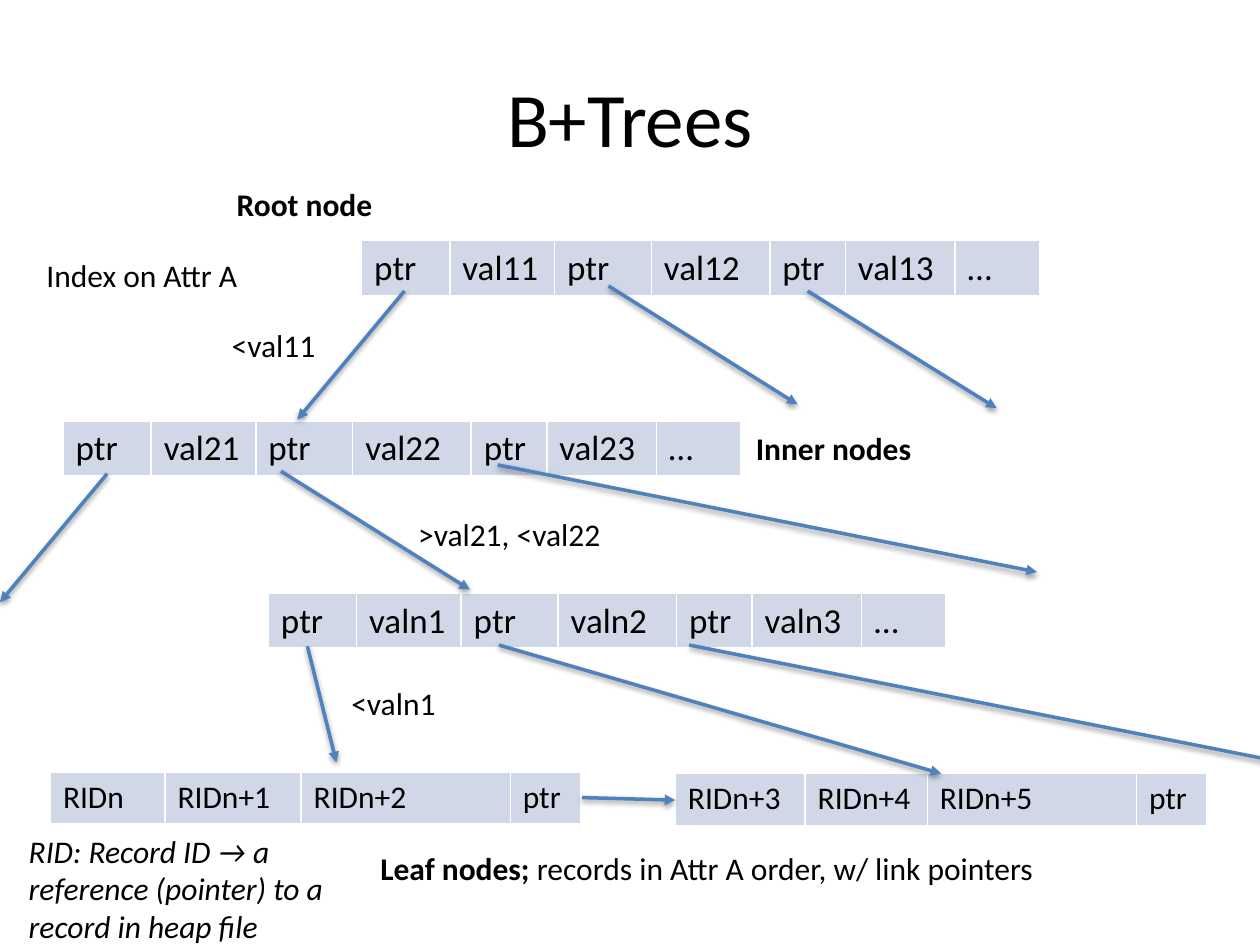
import dataclasses

import lxml.etree
import pptx
import pptx.dml.color
import pptx.enum.shapes
import pptx.enum.text
import pptx.oxml
import pptx.oxml.ns
import pptx.util

Inches = pptx.util.Inches
Pt = pptx.util.Pt
RGB = pptx.dml.color.RGBColor.from_string
qn = pptx.oxml.ns.qn
NS = pptx.oxml.ns.nsdecls("a")


@dataclasses.dataclass(frozen=True)
class Theme:
    font: str = "Calibri"
    text: str = "000000"
    cell: str = "D0D8E8"
    border: str = "FFFFFF"
    arrow: str = "4F81BD"
    title_size: int = 44
    node_size: int = 20
    body_size: int = 18


class TreeSlide:
    def __init__(self, slide, theme):
        self.slide = slide
        self.theme = theme

    def style(self, run, size, bold=False, italic=False):
        font = run.font
        font.name, font.size = self.theme.font, Pt(size)
        font.bold, font.italic = bold, italic
        font.color.rgb = RGB(self.theme.text)

    def text_box(self, left, top, width, height, text, size, wrap=True):
        box = self.slide.shapes.add_textbox(
            Inches(left), Inches(top), Inches(width), Inches(height))
        frame = box.text_frame
        frame.word_wrap = wrap
        frame.text = text
        self.style(frame.paragraphs[0].runs[0], size)
        return frame

    def title(self, text):
        frame = self.text_box(0.5, 0.3, 9, 1.25, text, self.theme.title_size)
        frame.vertical_anchor = pptx.enum.text.MSO_ANCHOR.MIDDLE
        frame.paragraphs[0].alignment = pptx.enum.text.PP_ALIGN.CENTER

    def label(self, left, top, width, text, height=0.4, wrap=True,
              bold=False, italic=False, plain_tail=""):
        size = self.theme.body_size
        paragraph = self.text_box(
            left, top, width, height, text, size, wrap).paragraphs[0]
        self.style(paragraph.runs[0], size, bold, italic)
        if plain_tail:
            tail = paragraph.add_run()
            tail.text = plain_tail
            self.style(tail, size)

    def node(self, left, top, height, widths, entries, size):
        table = self.slide.shapes.add_table(
            1, len(entries), Inches(left), Inches(top),
            Inches(sum(widths)), Inches(height)).table
        table.first_row = table.horz_banding = False
        for column, width, entry in zip(table.columns, widths, entries):
            column.width = Inches(width)
        for cell, entry in zip(table.rows[0].cells, entries):
            cell.text = entry
            self.style(cell.text_frame.paragraphs[0].runs[0], size)
            cell.fill.solid()
            cell.fill.fore_color.rgb = RGB(self.theme.cell)
            self.cell_borders(cell)

    def cell_borders(self, cell):
        properties = cell._tc.get_or_add_tcPr()
        for position, side in enumerate(("lnL", "lnR", "lnT", "lnB")):
            properties.insert(position, pptx.oxml.parse_xml(
                f'<a:{side} {NS} w="{Pt(1)}"><a:solidFill>'
                f'<a:srgbClr val="{self.theme.border}"/></a:solidFill></a:{side}>'))

    def arrow(self, x1, y1, x2, y2):
        line = self.slide.shapes.add_connector(
            pptx.enum.shapes.MSO_CONNECTOR.STRAIGHT,
            Inches(x1), Inches(y1), Inches(x2), Inches(y2))
        line.line.color.rgb = RGB(self.theme.arrow)
        line.line.width = Pt(2)
        lxml.etree.SubElement(
            line.line._get_or_add_ln(), qn("a:tailEnd"), type="triangle")
        # Soft shadow straight below the line
        line._element.spPr.append(pptx.oxml.parse_xml(
            f'<a:effectLst {NS}><a:outerShdw blurRad="{Pt(3.1)}" dist="{Pt(1.6)}"'
            ' dir="5400000" rotWithShape="0"><a:srgbClr val="000000">'
            '<a:alpha val="38000"/></a:srgbClr></a:outerShdw></a:effectLst>'))


def main():
    presentation = pptx.Presentation()
    presentation.slide_width = Inches(10)
    presentation.slide_height = Inches(7.5)
    theme = Theme()
    tree = TreeSlide(
        presentation.slides.add_slide(presentation.slide_layouts[6]), theme)

    tree.title("B+Trees")

    # Root and inner nodes: pointers alternate with the values of one level
    key_widths = [0.7, 0.83, 0.77, 0.94, 0.6, 0.87, 0.67]
    for left, top, level in [(2.87, 1.91, "1"), (0.5, 3.34, "2"), (2.13, 4.71, "n")]:
        entries = [entry for i in (1, 2, 3) for entry in ("ptr", f"val{level}{i}")]
        tree.node(left, top, 0.43, key_widths, entries + ["…"], theme.node_size)

    # Leaf nodes: record IDs and a link pointer
    for left, top, id_widths, records in [
        (0.4, 6.13, [0.91, 1.08], ["RIDn", "RIDn+1", "RIDn+2"]),
        (5.36, 6.14, [1.03, 0.97], ["RIDn+3", "RIDn+4", "RIDn+5"]),
    ]:
        tree.node(left, top, 0.41, id_widths + [1.66, 0.56],
                  records + ["ptr"], theme.body_size)

    # Pointers, level by level, then the link between the leaves
    for ends in [
        (3.21, 2.31, 2.36, 3.33), (4.83, 2.27, 6.33, 3.21), (6.41, 2.31, 7.91, 3.24),
        (0.85, 3.76, 0, 4.78), (2.23, 3.74, 3.73, 4.68), (3.95, 3.69, 8.23, 4.54),
        (2.44, 5.13, 2.67, 6.05), (3.96, 5.12, 7.47, 6.14), (5.47, 5.12, 10.18, 6.05),
        (4.62, 6.33, 5.36, 6.35),
    ]:
        tree.arrow(*ends)

    # Conditions on the pointers
    tree.label(1.74, 2.54, 1.59, "<val11")
    tree.label(3.22, 4.04, 2.4, ">val21, <val22")
    tree.label(2.69, 5.38, 2.4, "<valn1")

    # Names of the levels and remarks
    tree.label(2.92, 6.69, 6.08, "Leaf nodes; ", bold=True,
               plain_tail="records in Attr A order, w/ link pointers")
    tree.label(1.78, 1.42, 1.59, "Root node", bold=True)
    tree.label(5.9, 3.36, 1.59, "Inner nodes", bold=True)
    tree.label(0.27, 1.98, 1.74, "Index on Attr A", wrap=False)
    tree.label(0.13, 6.55, 2.54,
               "RID: Record ID → a reference (pointer) to a record in heap file",
               height=1.01, italic=True)

    presentation.save("out.pptx")


if __name__ == "__main__":
    main()
